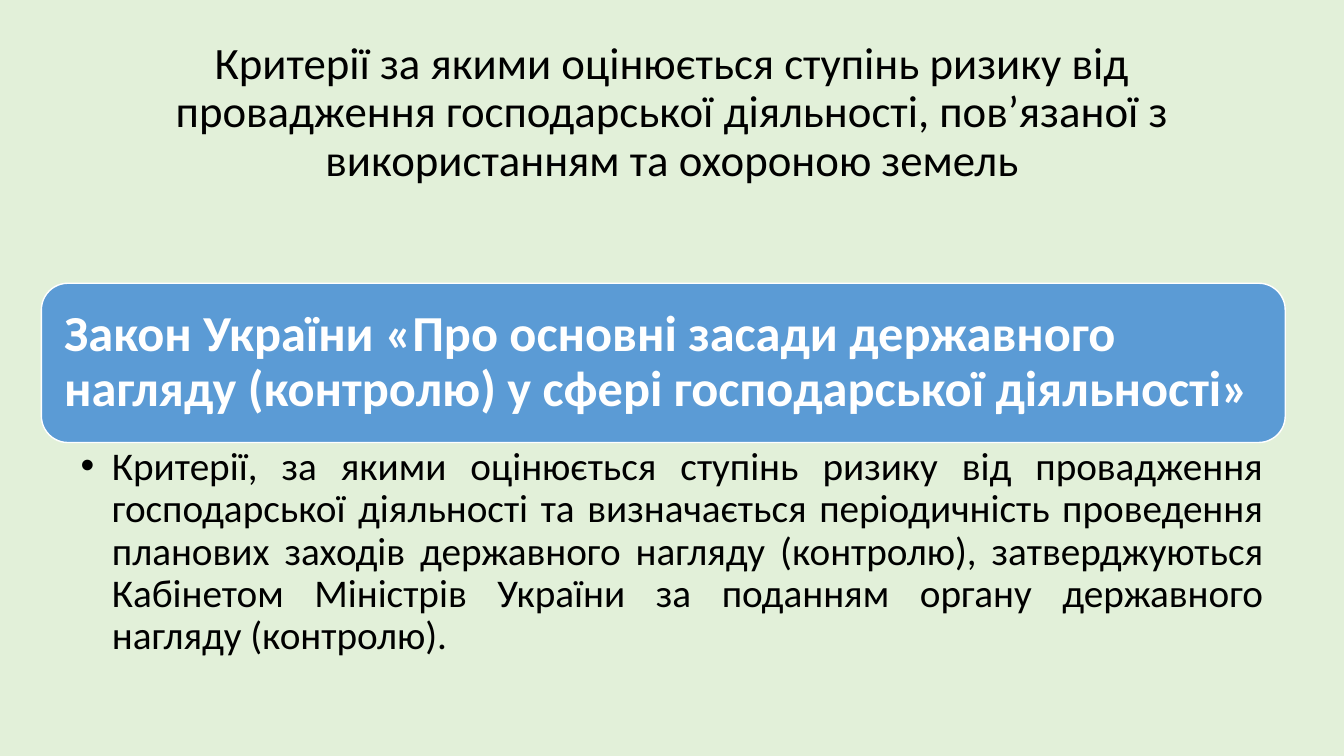
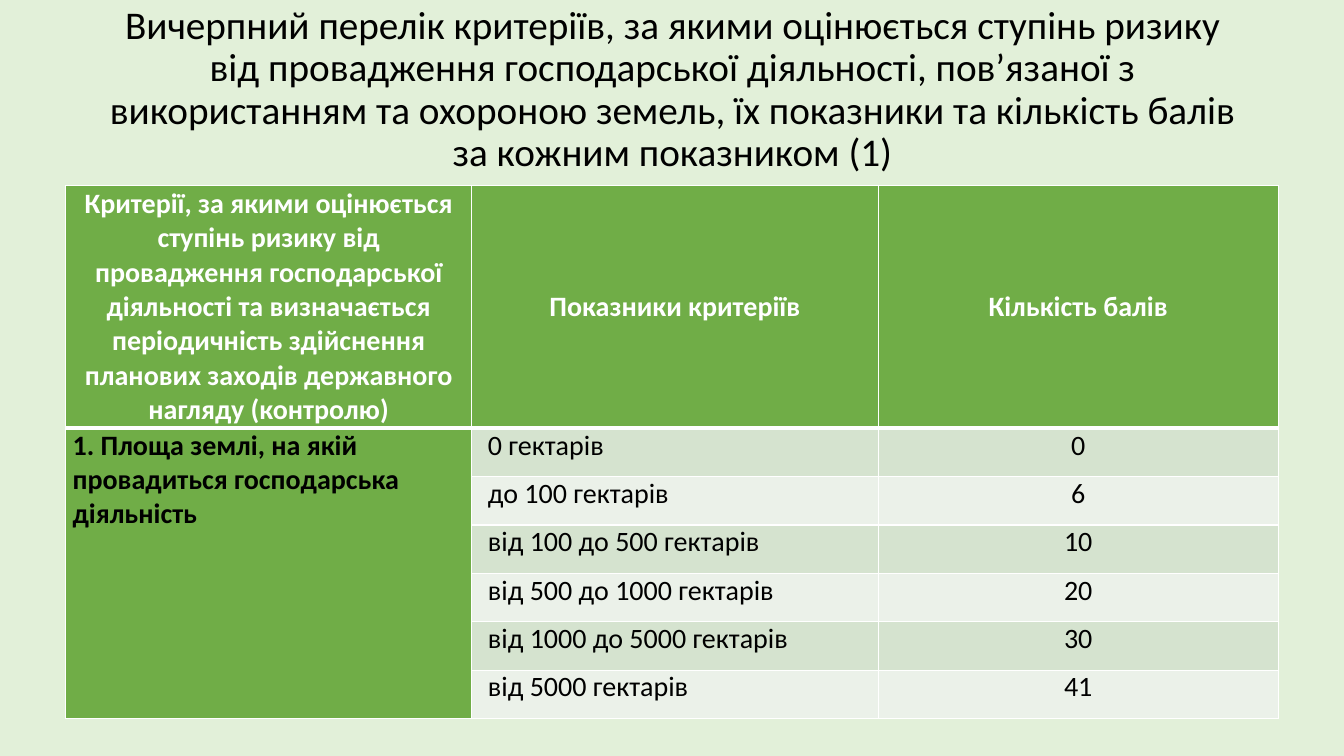
from dataclasses import dataclass

from lxml.etree import SubElement
from pptx import Presentation
from pptx.dml.color import RGBColor
from pptx.enum.shapes import MSO_SHAPE
from pptx.enum.text import MSO_ANCHOR, PP_ALIGN
from pptx.oxml.ns import qn
from pptx.util import Inches, Pt

SLIDE_WIDTH, SLIDE_HEIGHT = Inches(13.33), Inches(7.5)


@dataclass(frozen=True)
class Theme:
    font: str = "Calibri"
    background: str = "E2F0D9"
    ink: str = "000000"
    white: str = "FFFFFF"
    law: str = "5B9BD5"
    header: str = "70AD47"
    bands: tuple = ("D5E3CF", "EBF1E9")
    title_size: int = 32
    long_title_size: int = 28
    law_size: int = 36
    body_size: int = 28
    table_size: int = 20
    thin: int = 1
    thick: int = 3


THEME = Theme()

CRITERIA_TITLE = (
    "Критерії за якими оцінюється ступінь ризику від провадження господарської "
    "діяльності, пов’язаної з використанням та охороною земель"
)
LAW = (
    "Закон України «Про основні засади державного нагляду (контролю) у сфері "
    "господарської діяльності»"
)
LAW_PROVISION = (
    "Критерії, за якими оцінюється ступінь ризику від провадження господарської "
    "діяльності та визначається періодичність проведення планових заходів "
    "державного нагляду (контролю), затверджуються Кабінетом Міністрів України "
    "за поданням органу державного нагляду (контролю)."
)
SCORES_TITLE = (
    "Вичерпний перелік критеріїв, за якими оцінюється ступінь ризику від "
    "провадження господарської діяльності, пов’язаної з використанням та "
    "охороною земель, їх показники та кількість балів за кожним показником (1)"
)
HEADINGS = (
    "Критерії, за якими оцінюється ступінь ризику від провадження господарської "
    "діяльності та визначається періодичність здійснення планових заходів "
    "державного нагляду (контролю)",
    "Показники критеріїв",
    "Кількість балів",
)
CRITERION = "1. Площа землі, на якій провадиться господарська діяльність"
SCORES = (
    ("0 гектарів", "0"),
    ("до 100 гектарів", "6"),
    ("від 100 до 500 гектарів", "10"),
    ("від 500 до 1000 гектарів", "20"),
    ("від 1000 до 5000 гектарів", "30"),
    ("від 5000 гектарів", "41"),
)


def across(percent):
    return round(SLIDE_WIDTH * percent / 100)


def down(percent):
    return round(SLIDE_HEIGHT * percent / 100)


def place(left, top, width, height):
    """Turn percentages of the slide into a position and size."""
    return across(left), down(top), across(width), down(height)


def apply(target, formats):
    for attribute, value in formats.items():
        setattr(target, attribute, value)


def set_margins(target, left, top, right, bottom):
    apply(target, {
        "margin_left": Inches(left), "margin_top": Inches(top),
        "margin_right": Inches(right), "margin_bottom": Inches(bottom),
    })


def paint(fill, color):
    fill.solid()
    fill.fore_color.rgb = RGBColor.from_string(color)


def write(frame, text, size, color=THEME.ink, bold=False, **paragraph_formats):
    paragraph = frame.paragraphs[0]
    apply(paragraph, paragraph_formats)
    run = paragraph.add_run()
    run.text = text
    apply(run.font, {"name": THEME.font, "size": Pt(size), "bold": bold})
    run.font.color.rgb = RGBColor.from_string(color)
    return paragraph


def indent(paragraph, left, first=0, bullet=None):
    properties = paragraph._p.get_or_add_pPr()
    properties.set("marL", str(Inches(left)))
    properties.set("indent", str(Inches(first)))
    if bullet:
        SubElement(properties, qn("a:buFont"), typeface="Arial")
        SubElement(properties, qn("a:buChar"), char=bullet)


def add_slide(deck, title, title_top, title_size):
    slide = deck.slides.add_slide(deck.slide_layouts[6])
    paint(slide.background.fill, THEME.background)
    heading = slide.shapes.add_textbox(*place(6.9, title_top, 86.25, 19.33))
    frame = heading.text_frame
    apply(frame, {"word_wrap": True, "vertical_anchor": MSO_ANCHOR.MIDDLE})
    write(frame, title, title_size, alignment=PP_ALIGN.CENTER, line_spacing=0.9)
    return slide


def add_law(slide, name, provision):
    """Add a rounded banner with the law's name and its provision below."""
    left, top, width, height = 3.08, 37.47, 92.55, 21.07
    banner = slide.shapes.add_shape(
        MSO_SHAPE.ROUNDED_RECTANGLE, *place(left, top, width, height))
    banner.shadow.inherit = False
    paint(banner.fill, THEME.law)
    paint(banner.line.fill, THEME.white)
    banner.line.width = Pt(THEME.thin)
    frame = banner.text_frame
    apply(frame, {"word_wrap": True, "vertical_anchor": MSO_ANCHOR.MIDDLE})
    set_margins(frame, 0.15, 0.15, 0.15, 0.15)
    write(frame, name, THEME.law_size, THEME.white, True,
          alignment=PP_ALIGN.LEFT, line_spacing=0.9)

    details = slide.shapes.add_textbox(*place(left, top + height, width, 29.87))
    details.text_frame.word_wrap = True
    set_margins(details.text_frame, 0.39, 0.04, 0.22, 0.04)
    point = write(details.text_frame, provision, THEME.body_size,
                  alignment=PP_ALIGN.JUSTIFY, line_spacing=0.9)
    indent(point, 0.31, -0.31, "•")


def set_borders(cell, top, bottom):
    properties = cell._tc.get_or_add_tcPr()
    widths = {"lnL": THEME.thin, "lnR": THEME.thin, "lnT": top, "lnB": bottom}
    for side, width in widths.items():
        border = SubElement(properties, qn(f"a:{side}"), w=str(Pt(width)))
        color = SubElement(border, qn("a:solidFill"))
        SubElement(color, qn("a:srgbClr"), val=THEME.white)


def fill_cell(cell, text, fill, color=THEME.ink, bold=False,
              alignment=PP_ALIGN.LEFT, anchor=MSO_ANCHOR.TOP):
    paint(cell.fill, fill)
    cell.vertical_anchor = anchor
    set_margins(cell, 0.07, 0, 0.07, 0)
    return write(cell.text_frame, text, THEME.table_size, color, bold,
                 alignment=alignment, space_before=Pt(6))


def add_scores(slide, headings, criterion, scores):
    column_shares = (30.23, 30.23, 29.78)
    row_shares = (32.13,) + (6.4,) * len(scores)
    table = slide.shapes.add_table(
        len(row_shares), len(column_shares),
        *place(4.88, 24.53, sum(column_shares), sum(row_shares))).table
    apply(table, {"first_row": False, "horz_banding": False})
    for column, share in zip(table.columns, column_shares):
        column.width = across(share)
    for number, (row, share) in enumerate(zip(table.rows, row_shares)):
        row.height = down(share)
        for cell in row.cells:
            set_borders(cell,
                        THEME.thick if number == 1 else THEME.thin,
                        THEME.thick if number == 0 else THEME.thin)

    for column, heading in enumerate(headings):
        fill_cell(table.cell(0, column), heading, THEME.header, THEME.white,
                  True, PP_ALIGN.CENTER, MSO_ANCHOR.MIDDLE)
    table.cell(1, 0).merge(table.cell(len(scores), 0))
    fill_cell(table.cell(1, 0), criterion, THEME.header, bold=True)
    for number, (indicator, points) in enumerate(scores):
        band = THEME.bands[number % len(THEME.bands)]
        indent(fill_cell(table.cell(number + 1, 1), indicator, band), 0.09)
        fill_cell(table.cell(number + 1, 2), points, band,
                  alignment=PP_ALIGN.CENTER)


def main():
    deck = Presentation()
    apply(deck, {"slide_width": SLIDE_WIDTH, "slide_height": SLIDE_HEIGHT})
    criteria = add_slide(deck, CRITERIA_TITLE, 5.33, THEME.title_size)
    add_law(criteria, LAW, LAW_PROVISION)
    ranking = add_slide(deck, SCORES_TITLE, 2.27, THEME.long_title_size)
    add_scores(ranking, HEADINGS, CRITERION, SCORES)
    deck.save("out.pptx")


if __name__ == "__main__":
    main()
